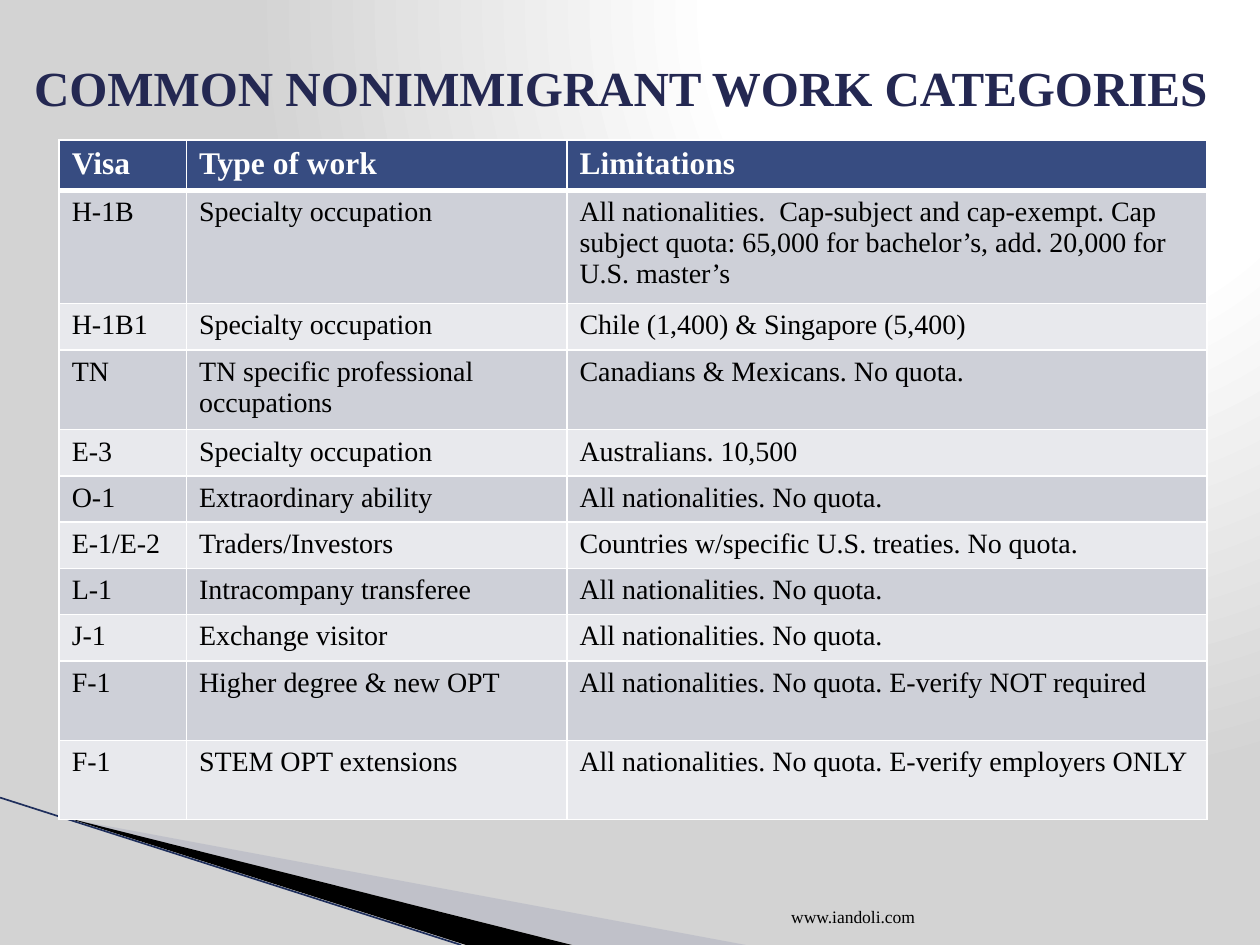
from pptx import Presentation
from pptx.dml.color import RGBColor
from pptx.enum.text import MSO_ANCHOR, PP_ALIGN
from pptx.enum.shapes import MSO_CONNECTOR
from pptx.oxml import parse_xml
from pptx.oxml.ns import nsdecls, qn
from pptx.util import Inches, Pt

LEFT, RIGHT = PP_ALIGN.LEFT, PP_ALIGN.RIGHT
MIDDLE, BOTTOM = MSO_ANCHOR.MIDDLE, MSO_ANCHOR.BOTTOM
STRAIGHT = MSO_CONNECTOR.STRAIGHT

WHITE = RGBColor(0xFF, 0xFF, 0xFF)
BLACK = RGBColor(0, 0, 0)
GREY = RGBColor(0xD3, 0xD3, 0xD3)
NAVY = RGBColor(0x24, 0x28, 0x52)
BLUE = RGBColor(0x37, 0x4C, 0x81)
HAZE = RGBColor(0xA4, 0xA8, 0xBC)
EDGE = RGBColor(0x1F, 0x2F, 0x5C)
BANDS = RGBColor(0xCE, 0xD0, 0xD8), RGBColor(0xE8, 0xE9, 0xED)

COLS, ROWS = 100, 75  # grid laid over the slide
NO_CAP = "All nationalities. No quota."
VISAS = [
    ("Visa", "Type of work", "Limitations"),
    ("H-1B", "Specialty occupation",
     "All nationalities.  Cap-subject and cap-exempt. Cap subject quota: "
     "65,000 for bachelor’s, add. 20,000 for U.S. master’s"),
    ("H-1B1", "Specialty occupation", "Chile (1,400) & Singapore (5,400)"),
    ("TN", "TN specific professional occupations",
     "Canadians & Mexicans. No quota."),
    ("E-3", "Specialty occupation", "Australians. 10,500"),
    ("O-1", "Extraordinary ability", NO_CAP),
    ("E-1/E-2", "Traders/Investors",
     "Countries w/specific U.S. treaties. No quota."),
    ("L-1", "Intracompany transferee", NO_CAP),
    ("J-1", "Exchange visitor", NO_CAP),
    ("F-1", "Higher degree & new OPT", NO_CAP + " E-verify NOT required"),
    ("F-1", "STEM OPT extensions", NO_CAP + " E-verify employers ONLY"),
]
WIDTHS = [10.1, 30.2, 50.8]
HEIGHTS = [4, 8.9, 3.6, 6.1] + [3.6] * 5 + [6.3] * 2


class Deck:
    font = "Times New Roman"

    def __init__(self):
        self.prs = Presentation()
        self.prs.slide_width, self.prs.slide_height = Inches(10), Inches(7.5)
        self.slide = self.prs.slides.add_slide(self.prs.slide_layouts[5])
        self.shapes = self.slide.shapes

    def x(self, col):
        return round(self.prs.slide_width * col / COLS)

    def y(self, row):
        return round(self.prs.slide_height * row / ROWS)

    def box(self, col, row, wide, high):
        return self.x(col), self.y(row), self.x(wide), self.y(high)

    def glow(self, stops, left, bottom):
        """Fill the background with a round gradient."""
        fill = self.slide.background.fill
        fill.solid()
        marks = "".join(
            f'<a:gs pos="{pos * 1000}"><a:srgbClr val="{tint}"/></a:gs>'
            for pos, tint in stops)
        grad = parse_xml(
            f'<a:gradFill {nsdecls("a")} rotWithShape="1">'
            f'<a:gsLst>{marks}</a:gsLst><a:path path="circle">'
            f'<a:fillToRect l="{left * 1000}" b="{bottom * 1000}"/>'
            '</a:path></a:gradFill>')
        solid = self.slide.element.find(".//" + qn("a:solidFill"))
        solid.getparent().replace(solid, grad)

    def wedge(self, points, tint, alpha=100):
        spots = [(self.x(col), self.y(row)) for col, row in points]
        outline = self.shapes.build_freeform(*spots[0])
        outline.add_line_segments(spots[1:], close=True)
        shape = outline.convert_to_shape()
        shape.shadow.inherit = False
        shape.line.fill.background()
        shape.fill.solid()
        shape.fill.fore_color.rgb = tint
        if alpha < 100:
            clr = shape.element.spPr.find(".//" + qn("a:srgbClr"))
            clr.append(parse_xml(
                f'<a:alpha {nsdecls("a")} val="{alpha * 1000}"/>'))

    def line(self, start, end, tint, width):
        line = self.shapes.add_connector(
            STRAIGHT, self.x(start[0]), self.y(start[1]),
            self.x(end[0]), self.y(end[1]))
        line.line.color.rgb = tint
        line.line.width = Pt(width)
        line.element.spPr.append(parse_xml(f'<a:effectLst {nsdecls("a")}/>'))

    def label(self, frame, text, size, tint, bold=False, align=LEFT):
        frame.text = text
        frame.word_wrap = True
        para = frame.paragraphs[0]
        para.alignment = align
        font = para.runs[0].font
        font.name, font.size, font.bold = self.font, Pt(size), bold
        font.color.rgb = tint

    def title(self, text, place):
        shape = self.shapes.title
        shape.left, shape.top, shape.width, shape.height = self.box(*place)
        self.label(shape.text_frame, text, 28, NAVY, True)
        shape.text_frame.vertical_anchor = MIDDLE

    def note(self, text, place):
        frame = self.shapes.add_textbox(*self.box(*place)).text_frame
        self.label(frame, text, 10, BLACK, align=RIGHT)
        frame.vertical_anchor = BOTTOM

    def rule(self, cell, top, base):
        """Draw white borders, with the top and base widths in points."""
        props = cell._tc.get_or_add_tcPr()
        for side, width in zip("LRTB", (1, 1, top, base)):
            props.append(parse_xml(
                f'<a:ln{side} {nsdecls("a")} w="{Pt(width)}"><a:solidFill>'
                f'<a:srgbClr val="{WHITE}"/></a:solidFill></a:ln{side}>'))

    def table(self, data, col, row, widths, heights):
        place = self.box(col, row, sum(widths), sum(heights))
        grid = self.shapes.add_table(len(data), len(widths), *place).table
        for part, wide in zip(grid.columns, widths):
            part.width = self.x(wide)
        for part, high in zip(grid.rows, heights):
            part.height = self.y(high)
        for i, texts in enumerate(data):
            head = i == 0
            for j, text in enumerate(texts):
                cell = grid.cell(i, j)
                self.rule(cell, 3 if i == 1 else 1, 3 if head else 1)
                cell.fill.solid()
                cell.fill.fore_color.rgb = BLUE if head else BANDS[(i - 1) % 2]
                self.label(cell.text_frame, text, 18 if head else 16,
                           WHITE if head else BLACK, head)


def main():
    deck = Deck()
    deck.glow([(0, WHITE), (40, WHITE), (100, GREY)], left=65, bottom=98)
    deck.wedge([(5.5, 65), (59.2, 75), (45.5, 75)], HAZE, 40)
    deck.wedge([(5.3, 64.9), (45.4, 75), (37, 75)], BLACK)
    deck.line((0, 63.3), (36.6, 75), EDGE, 0.95)
    deck.note("www.iandoli.com", (47.9, 70.1, 25.7, 4))
    deck.title("COMMON NONIMMIGRANT WORK CATEGORIES", (1.7, 3, 96.7, 7.8))
    deck.table(VISAS, 4.7, 11.1, WIDTHS, HEIGHTS)
    deck.prs.save("out.pptx")


if __name__ == "__main__":
    main()
